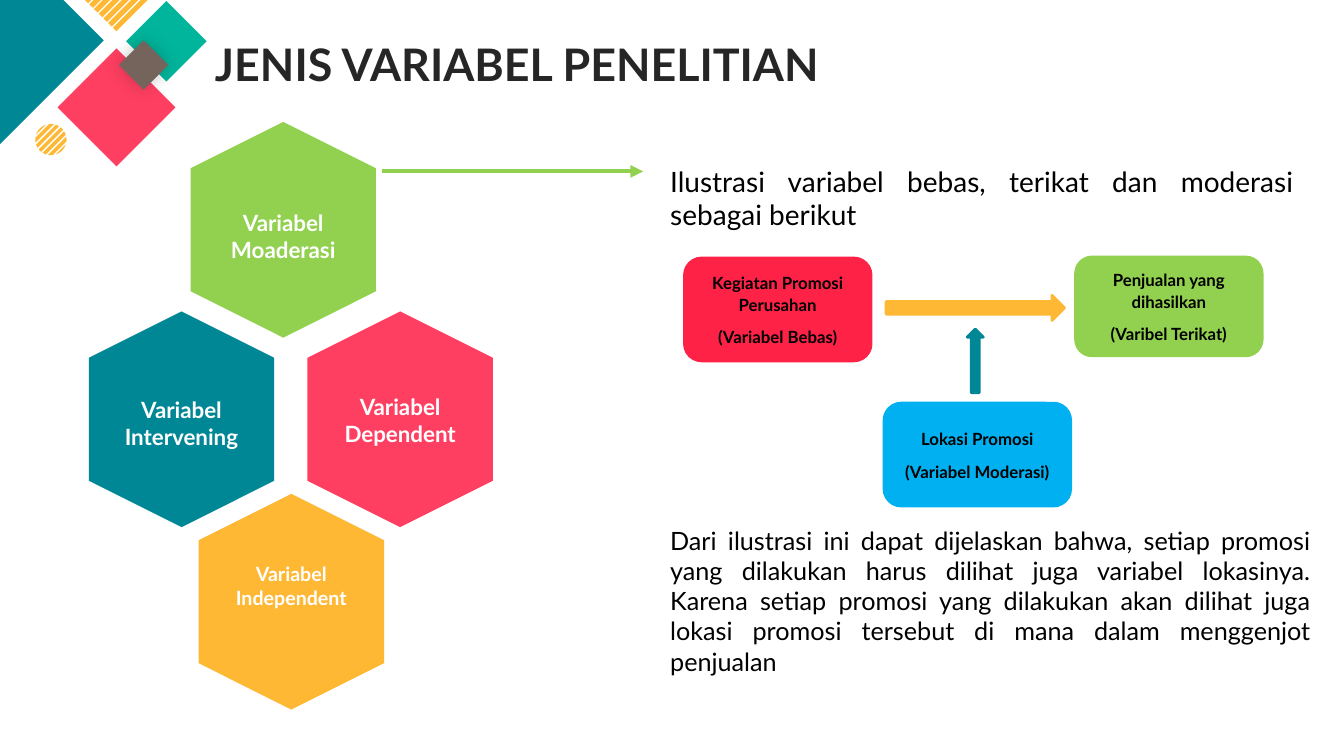
import math

from lxml import etree
from pptx import Presentation
from pptx.dml.color import RGBColor
from pptx.enum.shapes import MSO_CONNECTOR, MSO_SHAPE
from pptx.enum.text import MSO_ANCHOR, MSO_AUTO_SIZE, PP_ALIGN
from pptx.oxml import parse_xml
from pptx.oxml.ns import nsdecls, qn
from pptx.util import Inches, Pt

DIAMOND, HEXAGON, RECTANGLE = MSO_SHAPE.DIAMOND, MSO_SHAPE.HEXAGON, MSO_SHAPE.RECTANGLE
CARD, ARROW = MSO_SHAPE.ROUNDED_RECTANGLE, MSO_SHAPE.RIGHT_ARROW
CENTER, JUSTIFY = PP_ALIGN.CENTER, PP_ALIGN.JUSTIFY
TOP, MIDDLE = MSO_ANCHOR.TOP, MSO_ANCHOR.MIDDLE

TEAL = RGBColor(0x00, 0x87, 0x95)
PINK = RGBColor(0xFE, 0x3F, 0x61)
RED = RGBColor(0xFE, 0x22, 0x47)
AMBER = RGBColor(0xFE, 0xB8, 0x34)
MINT = RGBColor(0x01, 0xB5, 0x9C)
BROWN = RGBColor(0x75, 0x64, 0x5C)
LIME = RGBColor(0x92, 0xD0, 0x50)
SKY = RGBColor(0x00, 0xB0, 0xF0)
WHITE = RGBColor(0xFF, 0xFF, 0xFF)
BLACK = RGBColor(0x00, 0x00, 0x00)
CHARCOAL = RGBColor(0x26, 0x26, 0x26)

FONT = "Lato"
WIDTH, HEIGHT = Inches(13.333), Inches(7.5)
ASPECT = 16 / 9
MIL = 914.4  # one thousandth of an inch

HEX_WIDTH, HEX_HEIGHT = 16.05, 24.53
LABEL_WIDTH = 11.63


def area(left, top, width, height):
    """Turn percentages of the slide's size into lengths."""
    return (round(WIDTH * left / 100), round(HEIGHT * top / 100),
            round(WIDTH * width / 100), round(HEIGHT * height / 100))


def write(frame, *paragraphs, size, color=BLACK, bold=False, align=CENTER,
          anchor=TOP, wrap=True, line_spacing=None, space_after=None):
    frame.word_wrap = wrap
    frame.auto_size = MSO_AUTO_SIZE.NONE
    frame.vertical_anchor = anchor
    for index, words in enumerate(paragraphs):
        paragraph = frame.add_paragraph() if index else frame.paragraphs[0]
        paragraph.alignment = align
        paragraph.line_spacing = line_spacing
        paragraph.space_after = space_after
        run = paragraph.add_run()
        run.text = words
        run.font.name = FONT
        run.font.size = Pt(size)
        run.font.bold = bold
        run.font.color.rgb = color


def paint(shape, color, outline=False):
    shape.shadow.inherit = False
    shape.fill.solid()
    shape.fill.fore_color.rgb = color
    if outline:
        shape.line.color.rgb = color
        shape.line.width = Pt(2)
    else:
        shape.line.fill.background()


def add_figure(slide, kind, place, color, rotation=0, outline=False):
    figure = slide.shapes.add_shape(kind, *area(*place))
    figure.rotation = rotation
    paint(figure, color, outline)
    return figure


def add_text(slide, place, *paragraphs, **style):
    write(slide.shapes.add_textbox(*area(*place)).text_frame, *paragraphs, **style)


def add_diamond(slide, left, top, width, color):
    return add_figure(slide, DIAMOND, (left, top, width, width * ASPECT), color)


def add_soft_shadow(shape):
    effects = shape._element.spPr.find(qn("a:effectLst"))
    effects.append(parse_xml(
        f'<a:outerShdw {nsdecls("a")} blurRad="165100" dist="0" algn="ctr" rotWithShape="0">'
        '<a:srgbClr val="000000"><a:alpha val="21000"/></a:srgbClr></a:outerShdw>'))


def add_striped_disc(slide, center_x, center_y, radius, pitch, thickness, color):
    """Disc cut into diagonal bands; all lengths are thousandths of an inch."""
    def rim(angle):
        return (center_x + radius * math.cos(angle), center_y + radius * math.sin(angle))

    builder = None
    for step in range(-3, 4):
        near, far = (math.acos(max(-1, min(1, (step * pitch + side) / radius)))
                     for side in (-thickness / 2, thickness / 2))
        sweep = [near + (far - near) * part / 6 for part in range(7)]
        outline = ([rim(math.pi / 4 + turn) for turn in sweep]
                   + [rim(math.pi / 4 - turn) for turn in reversed(sweep)])
        if builder is None:
            builder = slide.shapes.build_freeform(*outline[0], scale=MIL)
        else:
            builder.move_to(*outline[0])
        builder.add_line_segments(outline[1:], close=True)
    paint(builder.convert_to_shape(), color)


def add_ornament(slide):
    add_diamond(slide, -7.88, -8.53, 15.6, TEAL)
    add_diamond(slide, 4.28, 6.4, 8.78, PINK)
    for step in range(7):
        add_figure(slide, RECTANGLE, (7.43 + 0.35 * step, -4.93 + 0.62 * step, 0.38, 6),
                   AMBER, rotation=45)
    add_diamond(slide, 9.38, 0.13, 6, MINT)
    add_soft_shadow(add_diamond(slide, 8.85, 5.33, 3.68, BROWN))
    add_striped_disc(slide, 505, 1385, 155, 52, 35, AMBER)


def add_title(slide, words):
    title = slide.shapes.title
    title.left, title.top, title.width, title.height = area(15.23, 4.13, 46.5, 8.53)
    write(title.text_frame, words, size=32, color=CHARCOAL, bold=True,
          anchor=MIDDLE, wrap=False)


def add_variable(slide, words, left, top, label_top, color, size=16):
    add_figure(slide, HEXAGON, (left, top, HEX_WIDTH, HEX_HEIGHT), color, rotation=90)
    label_left = left + (HEX_WIDTH - LABEL_WIDTH) / 2
    add_text(slide, (label_left, label_top, LABEL_WIDTH, 8.53), words,
             size=size, color=WHITE, bold=True)


def add_card(slide, left, top, height, color, name, role):
    card = add_figure(slide, CARD, (left, top, 13.88, height), color, outline=True)
    write(card.text_frame, name, role, size=12, bold=True, anchor=MIDDLE,
          line_spacing=1.07, space_after=Pt(8))


def add_pointer(slide, start, end, level, color):
    x1, y, x2, _ = area(start, level, end, 0)
    pointer = slide.shapes.add_connector(MSO_CONNECTOR.STRAIGHT, x1, y, x2, y)
    pointer.line.color.rgb = color
    pointer.line.width = Pt(3)
    etree.SubElement(pointer.line._get_or_add_ln(), qn("a:tailEnd"), type="triangle")
    etree.SubElement(pointer._element.spPr, qn("a:effectLst"))


def main():
    deck = Presentation()
    deck.slide_width, deck.slide_height = WIDTH, HEIGHT
    slide = deck.slides.add_slide(deck.slide_layouts[5])

    add_ornament(slide)
    add_title(slide, "JENIS VARIABEL PENELITIAN")

    add_variable(slide, "Variabel Independent", 13.65, 67.33, 73.73, AMBER, size=14)
    add_variable(slide, "Variabel Dependent", 21.75, 43.2, 51.33, PINK)
    add_variable(slide, "Variabel Intervening", 5.48, 43.2, 51.73, TEAL)
    add_variable(slide, "Variabel Moaderasi", 13.05, 18.13, 27.07, LIME)
    add_pointer(slide, 28.43, 47.85, 22.67, LIME)

    add_text(slide, (49.13, 21.07, 47.85, 10.27),
             "Ilustrasi variabel bebas, terikat dan moderasi sebagai berikut",
             size=20, align=JUSTIFY)
    add_card(slide, 50.93, 34.13, 13.6, RED, "Kegiatan Promosi Perusahan", "(Variabel Bebas)")
    add_card(slide, 80.03, 34, 13.07, LIME, "Penjualan yang dihasilkan", "(Varibel Terikat)")
    add_card(slide, 65.78, 53.33, 13.6, SKY, "Lokasi Promosi", "(Variabel Moderasi)")
    add_figure(slide, ARROW, (65.93, 39.07, 13.28, 3.33), AMBER, outline=True)
    add_figure(slide, ARROW, (70.2, 46.67, 4.73, 2.13), TEAL, rotation=270, outline=True)
    add_text(slide, (49.13, 68.8, 49.13, 21.6),
             "Dari ilustrasi ini dapat dijelaskan bahwa, setiap promosi yang dilakukan harus "
             "dilihat juga variabel lokasinya. Karena setiap promosi yang dilakukan akan dilihat "
             "juga lokasi promosi tersebut di mana dalam menggenjot penjualan",
             size=18, align=JUSTIFY)

    deck.save("out.pptx")


if __name__ == "__main__":
    main()
